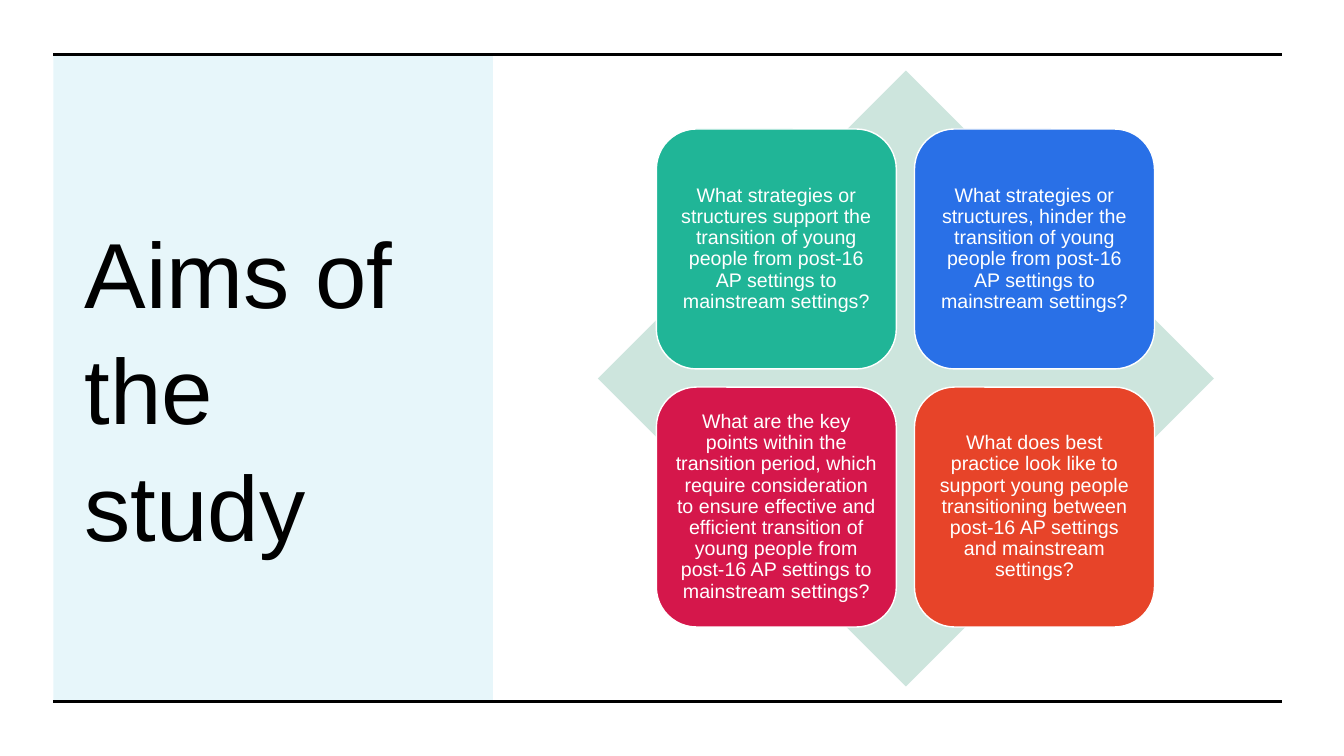
from dataclasses import dataclass

from lxml.etree import SubElement
from pptx import Presentation
from pptx.dml.color import RGBColor
from pptx.enum.shapes import MSO_CONNECTOR, MSO_SHAPE
from pptx.enum.text import MSO_ANCHOR, MSO_AUTO_SIZE, PP_ALIGN
from pptx.oxml.ns import qn
from pptx.shapes.autoshape import Shape
from pptx.slide import Slide
from pptx.text.text import TextFrame
from pptx.util import Inches, Pt

COLORS = {
    "panel": "17ADD5",
    "diamond": "CDE5DD",
    "green": "20B597",
    "blue": "2970E7",
    "crimson": "D5174B",
    "orange": "E74429",
    "black": "000000",
    "white": "FFFFFF",
}
FONT = "Arial"
RULE_LEFT, RULE_RIGHT = 0.53, 12.72
RULE_TOPS = (0.54, 6.96)
CARD_LEFT, CARD_TOP, CARD_SIZE, CARD_PITCH = 6.51, 1.28, 2.38, 2.56


@dataclass(frozen=True)
class Aim:
    question: str
    color: str


AIMS = (
    Aim("What strategies or structures support the transition of young people "
        "from post-16 AP settings to mainstream settings?", "green"),
    Aim("What strategies or structures, hinder the transition of young people "
        "from post-16 AP settings to mainstream settings?", "blue"),
    Aim("What are the key points within the transition period, which require "
        "consideration to ensure effective and efficient transition of young people "
        "from post-16 AP settings to mainstream settings?", "crimson"),
    Aim("What does best practice look like to support young people transitioning "
        "between post-16 AP settings and mainstream settings?", "orange"),
)


def rgb(name: str) -> RGBColor:
    return RGBColor.from_string(COLORS[name])


def add_filled_shape(slide: Slide, kind: MSO_SHAPE, left: float, top: float,
                     width: float, height: float, color: str) -> Shape:
    shape = slide.shapes.add_shape(
        kind, Inches(left), Inches(top), Inches(width), Inches(height))
    shape.shadow.inherit = False
    shape.fill.solid()
    shape.fill.fore_color.rgb = rgb(color)
    shape.line.fill.background()
    return shape


def write_text(frame: TextFrame, text: str, size: float, color: str,
               alignment: PP_ALIGN, line_spacing: float) -> None:
    frame.text = text
    frame.word_wrap = True
    frame.auto_size = MSO_AUTO_SIZE.NONE
    frame.vertical_anchor = MSO_ANCHOR.MIDDLE
    paragraph = frame.paragraphs[0]
    paragraph.alignment = alignment
    paragraph.line_spacing = line_spacing
    font = paragraph.runs[0].font
    font.name = FONT
    font.size = Pt(size)
    font.color.rgb = rgb(color)


def add_panel(slide: Slide) -> None:
    """Add the pale panel behind the title."""
    panel = add_filled_shape(slide, MSO_SHAPE.RECTANGLE, RULE_LEFT, RULE_TOPS[0],
                             4.36, 6.41, "panel")
    fill_color = panel.fill._xPr.find(qn("a:solidFill"))[0]
    SubElement(fill_color, qn("a:alpha"), val="10000")
    slide.shapes.title._element.addprevious(panel._element)


def add_title(slide: Slide) -> None:
    title = slide.shapes.title
    title.left, title.top = Inches(0.74), Inches(1.07)
    title.width, title.height = Inches(3.89), Inches(5.5)
    write_text(title.text_frame, "Aims of the study", 66, "black", PP_ALIGN.LEFT, 1.05)


def add_rule(slide: Slide, top: float) -> None:
    rule = slide.shapes.add_connector(
        MSO_CONNECTOR.STRAIGHT, Inches(RULE_LEFT), Inches(top),
        Inches(RULE_RIGHT), Inches(top))
    rule.line.color.rgb = rgb("black")
    rule.line.width = Pt(2.25)
    SubElement(rule._element.spPr, qn("a:effectLst"))


def add_aim_card(slide: Slide, aim: Aim, row: int, column: int) -> None:
    card = add_filled_shape(
        slide, MSO_SHAPE.ROUNDED_RECTANGLE, CARD_LEFT + column * CARD_PITCH,
        CARD_TOP + row * CARD_PITCH, CARD_SIZE, CARD_SIZE, aim.color)
    card.line.color.rgb = rgb("white")
    card.line.width = Pt(1)
    frame = card.text_frame
    frame.margin_left = frame.margin_right = Inches(0.06)
    frame.margin_top = frame.margin_bottom = Inches(0.06)
    write_text(frame, aim.question, 14, "white", PP_ALIGN.CENTER, 0.9)


def main() -> None:
    presentation = Presentation()
    presentation.slide_width = Inches(13.33)
    presentation.slide_height = Inches(7.5)
    slide = presentation.slides.add_slide(presentation.slide_layouts[5])

    add_title(slide)
    add_panel(slide)
    for top in RULE_TOPS:
        add_rule(slide, top)
    add_filled_shape(slide, MSO_SHAPE.DIAMOND, 5.93, 0.7, 6.11, 6.11, "diamond")
    for index, aim in enumerate(AIMS):
        row, column = divmod(index, 2)
        add_aim_card(slide, aim, row, column)

    presentation.save("out.pptx")


if __name__ == "__main__":
    main()
